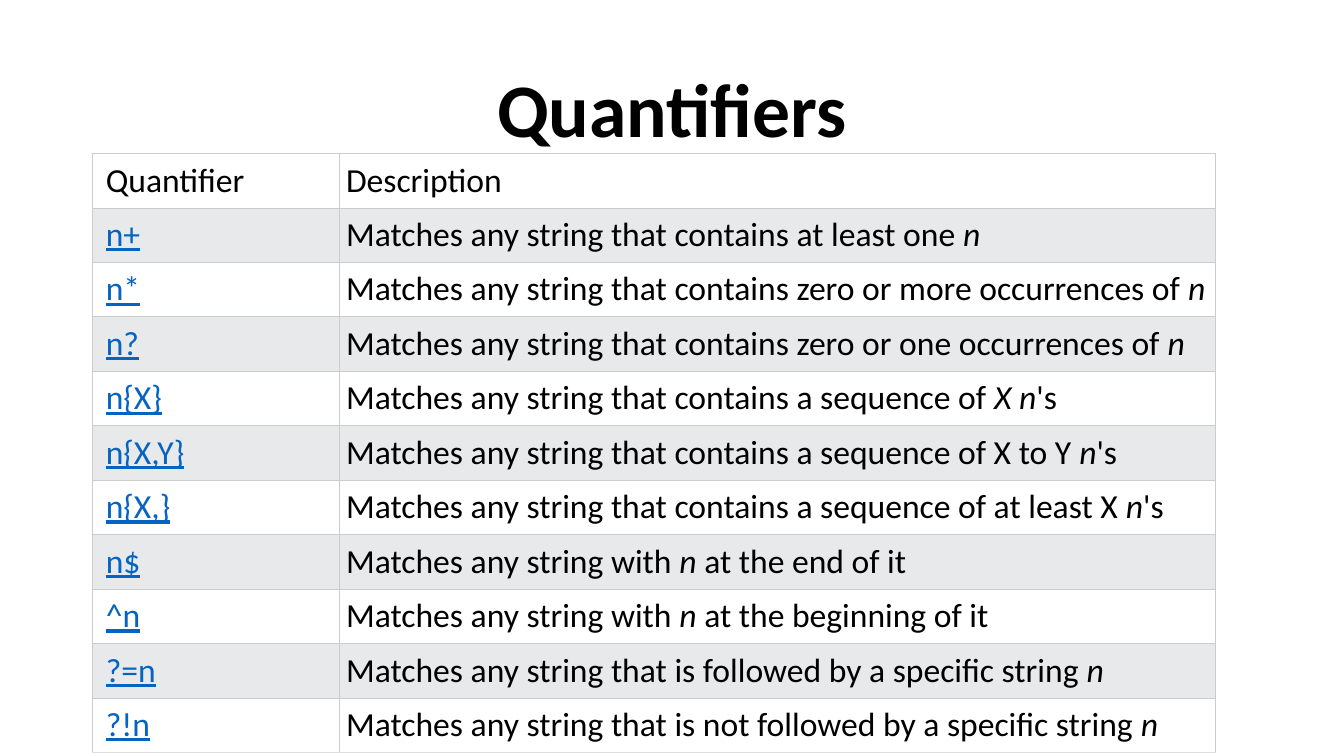
from lxml import etree
from pptx import Presentation
from pptx.dml.color import RGBColor
from pptx.enum.text import MSO_ANCHOR, MSO_AUTO_SIZE, PP_ALIGN
from pptx.oxml.ns import qn
from pptx.util import Pt

CENTER = PP_ALIGN.CENTER
MIDDLE = MSO_ANCHOR.MIDDLE
TOP = MSO_ANCHOR.TOP
NO_AUTOFIT = MSO_AUTO_SIZE.NONE

FONT = "Calibri"
COLORS = {
    "text": "000000",
    "link": "0563C1",
    "plain": "FFFFFF",
    "band": "E7E9EB",
    "border": "CCCCCC",
    "last_border": "DDDDDD",
}
TITLE_BOX = (66, 28.75, 828, 104.4)
TABLE_BOX = (66, 109.6, 802.4, 380.2)
QUANTIFIER_WIDTH = 176.4
CELL_MARGIN = 4.8
BORDER_WIDTH = 0.6

# Underscores enclose the italic parts of a description.
QUANTIFIERS = [
    ("Quantifier", "Description"),
    ("n+", "Matches any string that contains at least one _n_"),
    ("n*", "Matches any string that contains zero or more occurrences of _n_"),
    ("n?", "Matches any string that contains zero or one occurrences of _n_"),
    ("n{X}", "Matches any string that contains a sequence of _X n_'s"),
    ("n{X,Y}", "Matches any string that contains a sequence of X to Y _n_'s"),
    ("n{X,}", "Matches any string that contains a sequence of at least X _n_'s"),
    ("n$", "Matches any string with _n_ at the end of it"),
    ("^n", "Matches any string with _n_ at the beginning of it"),
    ("?=n", "Matches any string that is followed by a specific string _n_"),
    ("?!n", "Matches any string that is not followed by a specific string _n_"),
]


def format_run(run, size, color):
    run.font.name = FONT
    run.font.size = Pt(size)
    run.font.color.rgb = RGBColor.from_string(COLORS[color])


def place_title(slide, box):
    title = slide.shapes.title
    title.left, title.top, title.width, title.height = map(Pt, box)
    frame = title.text_frame
    frame.text = "Quantifiers"
    frame.auto_size = NO_AUTOFIT
    frame.word_wrap = True
    frame.vertical_anchor = MIDDLE
    heading = frame.paragraphs[0]
    heading.alignment = CENTER
    heading.line_spacing = 0.9
    format_run(heading.runs[0], 54, "text")
    heading.runs[0].font.bold = True


def set_borders(cell, bottom):
    properties = cell._tc.get_or_add_tcPr()
    sides = {"L": "border", "R": "border", "T": "border", "B": bottom}
    for position, (side, color) in enumerate(sides.items()):
        line = etree.Element(qn(f"a:ln{side}"), w=str(Pt(BORDER_WIDTH)))
        fill = etree.SubElement(line, qn("a:solidFill"))
        etree.SubElement(fill, qn("a:srgbClr"), val=COLORS[color])
        properties.insert(position, line)


def fill_cell(cell, text, color, fill, left_margin, bottom):
    cell.fill.solid()
    cell.fill.fore_color.rgb = RGBColor.from_string(COLORS[fill])
    cell.margin_left = Pt(left_margin)
    cell.margin_right = cell.margin_top = cell.margin_bottom = Pt(CELL_MARGIN)
    cell.vertical_anchor = TOP
    set_borders(cell, bottom)
    paragraph = cell.text_frame.paragraphs[0]
    for index, part in enumerate(text.split("_")):
        if part:
            run = paragraph.add_run()
            run.text = part
            format_run(run, 24, color)
            run.font.italic = index % 2 == 1
            run.font.underline = color == "link"


def place_quantifier_table(slide, box):
    left, top, width, height = box
    row_count = len(QUANTIFIERS)
    table = slide.shapes.add_table(row_count, 2, *map(Pt, box)).table
    table.first_row = False
    table.horz_banding = False
    table.columns[0].width = Pt(QUANTIFIER_WIDTH)
    table.columns[1].width = Pt(width - QUANTIFIER_WIDTH)
    for row, (quantifier, description) in enumerate(QUANTIFIERS):
        table.rows[row].height = Pt(height / row_count)
        fill = "band" if row % 2 else "plain"
        bottom = "last_border" if row == row_count - 1 else "border"
        color = "link" if row else "text"
        fill_cell(table.cell(row, 0), quantifier, color, fill, 2 * CELL_MARGIN, bottom)
        fill_cell(table.cell(row, 1), description, "text", fill, CELL_MARGIN, bottom)


def main():
    presentation = Presentation()
    presentation.slide_width = Pt(960)
    presentation.slide_height = Pt(540)
    slide = presentation.slides.add_slide(presentation.slide_layouts[5])
    place_title(slide, TITLE_BOX)
    place_quantifier_table(slide, TABLE_BOX)
    presentation.save("out.pptx")


if __name__ == "__main__":
    main()
